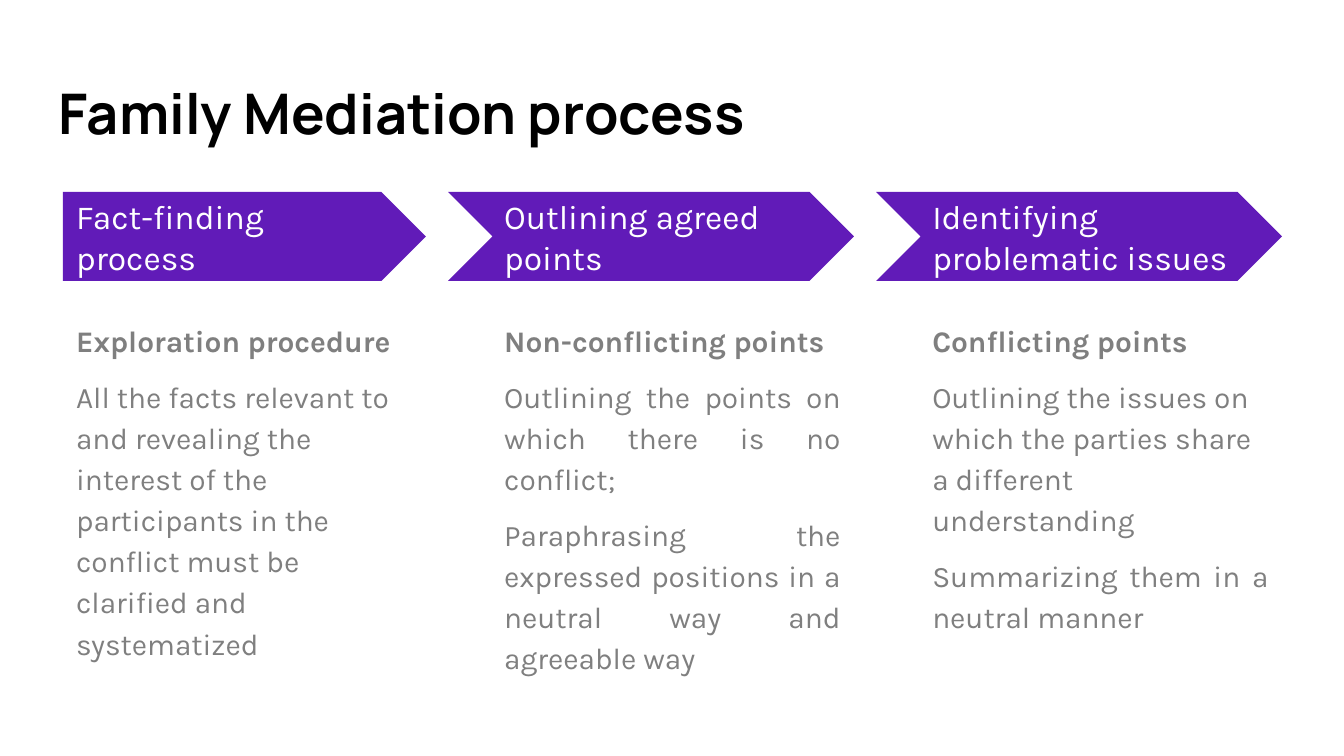
import pptx
import pptx.dml.color
import pptx.enum.shapes
import pptx.enum.text
import pptx.util
from dataclasses import dataclass

Cm = pptx.util.Cm
Pt = pptx.util.Pt
ALIGN = pptx.enum.text.PP_ALIGN
ANCHOR = pptx.enum.text.MSO_ANCHOR
SHAPE = pptx.enum.shapes.MSO_SHAPE


@dataclass(frozen=True)
class Theme:
    title_font: str = "Manrope"
    body_font: str = "Karla"
    black: str = "000000"
    white: str = "FFFFFF"
    grey: str = "7F7F7F"
    purple: str = "611BB8"
    title_size: int = 30
    step_size: int = 18
    body_size: int = 16


theme = Theme()


def rgb(value):
    return pptx.dml.color.RGBColor.from_string(value)


def write(frame, paragraphs, anchor=ANCHOR.TOP, color=theme.grey, **font_format):
    """Fill a text frame with (text, bold, paragraph format) entries."""
    frame.word_wrap = True
    frame.auto_size = pptx.enum.text.MSO_AUTO_SIZE.NONE
    frame.vertical_anchor = anchor
    for side in ("left", "top", "right", "bottom"):
        setattr(frame, f"margin_{side}", Cm(0.25))
    for index, (text, bold, paragraph_format) in enumerate(paragraphs):
        paragraph = frame.add_paragraph() if index else frame.paragraphs[0]
        for name, value in {"alignment": ALIGN.LEFT, **paragraph_format}.items():
            setattr(paragraph, name, value)
        run = paragraph.add_run()
        run.text = text
        for name, value in {"bold": bold, **font_format}.items():
            setattr(run.font, name, value)
        run.font.color.rgb = rgb(color)


steps = [
    ("Fact-finding process", "Exploration procedure", [
        ("All the facts relevant to and revealing the interest of the participants "
         "in the conflict must be clarified and systematized", ALIGN.LEFT),
    ]),
    ("Outlining agreed points", "Non-conflicting points", [
        ("Outlining the points on which there is no conflict;", ALIGN.JUSTIFY),
        ("Paraphrasing the expressed positions in a neutral way and agreeable way",
         ALIGN.JUSTIFY),
    ]),
    ("Identifying problematic issues", "Conflicting points", [
        ("Outlining the issues on which the parties share a different understanding",
         ALIGN.LEFT),
        ("Summarizing them in a neutral manner", ALIGN.JUSTIFY),
    ]),
]

first_left, column_pitch, column_width = Cm(1.19), Cm(8.09), Cm(6.86)
arrow_top, arrow_height, notch = Cm(3.63), Cm(1.68), Cm(0.81)
step_top, step_width, step_height = Cm(4.04), Cm(6.27), Cm(0.86)
details_top, details_height = Cm(5.74), Cm(7.37)

presentation = pptx.Presentation()
presentation.slide_width = Cm(25.4)
presentation.slide_height = Cm(14.29)
slide = presentation.slides.add_slide(presentation.slide_layouts[5])

title = slide.shapes.title
title.left, title.top, title.width, title.height = Cm(0.86), Cm(1.24), Cm(23.67), Cm(1.73)
write(title.text_frame, [("Family Mediation process", True, {})],
      color=theme.black, name=theme.title_font, size=Pt(theme.title_size))

for index, (step, heading, details) in enumerate(steps):
    left = first_left + index * column_pitch
    overhang = notch if index else 0
    arrow = slide.shapes.add_shape(
        SHAPE.CHEVRON if index else SHAPE.PENTAGON,
        left - overhang, arrow_top, column_width + overhang, arrow_height)
    arrow.adjustments[0] = 0.5
    arrow.shadow.inherit = False
    arrow.fill.solid()
    arrow.fill.fore_color.rgb = rgb(theme.purple)
    arrow.line.fill.background()

    step_label = slide.shapes.add_textbox(left, step_top, step_width, step_height)
    write(step_label.text_frame, [(step, False, {})], ANCHOR.MIDDLE, theme.white,
          name=theme.body_font, size=Pt(theme.step_size))

    paragraphs = [(heading, True, {"line_spacing": 1.15})]
    for text, alignment in details:
        paragraphs.append((text, False, {
            "alignment": alignment, "line_spacing": 1.15, "space_before": Pt(8)}))
    description = slide.shapes.add_textbox(left, details_top, column_width, details_height)
    write(description.text_frame, paragraphs,
          name=theme.body_font, size=Pt(theme.body_size))

presentation.save("out.pptx")
